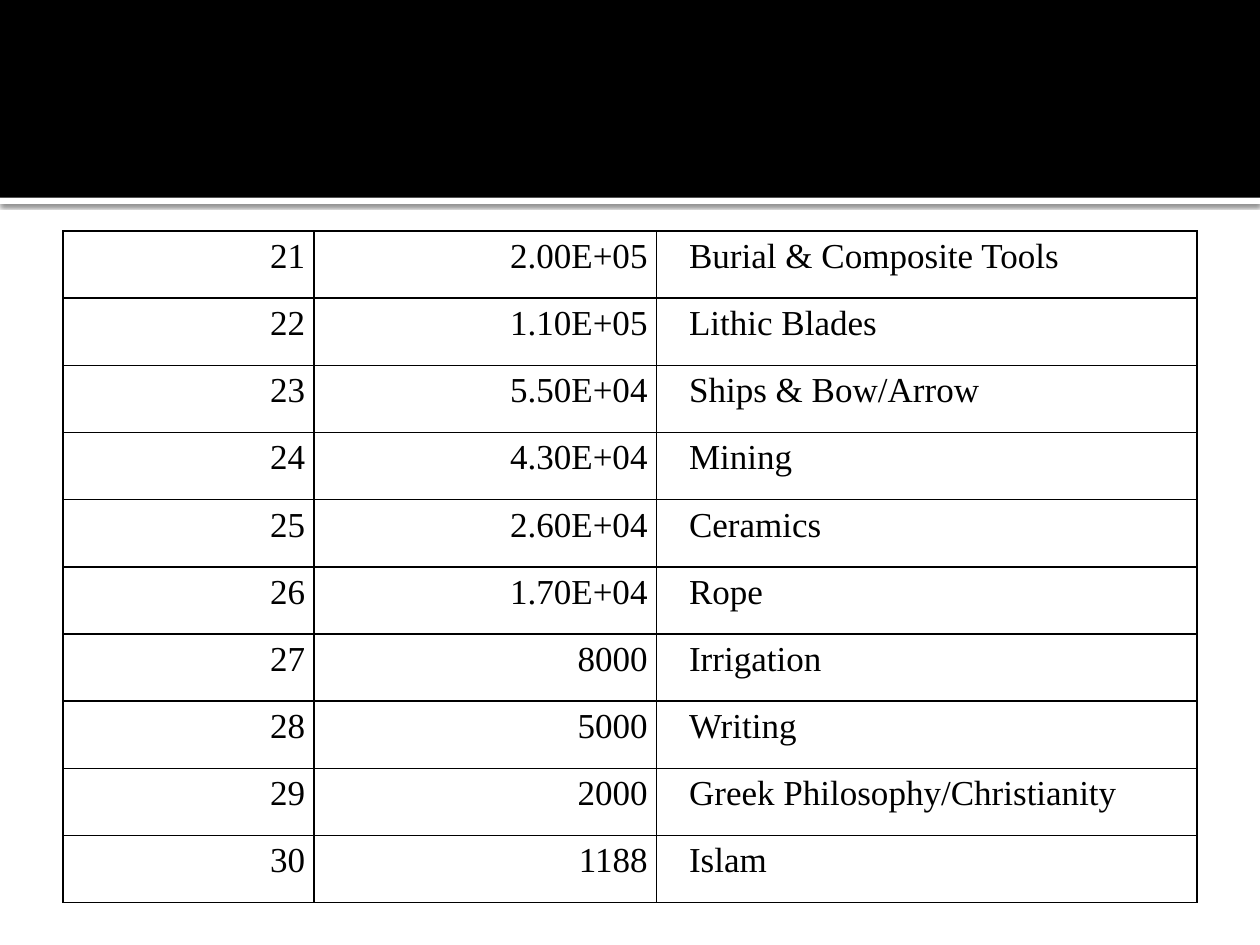
from lxml import etree
from pptx import Presentation
from pptx.dml.color import RGBColor
from pptx.enum import shapes, text
from pptx.oxml import ns
from pptx.util import Pt

BLACK, WHITE = "000000", "FFFFFF"
RIGHT, JUSTIFY = text.PP_ALIGN.RIGHT, text.PP_ALIGN.JUSTIFY
EVENTS = [
    ("21", "2.00E+05", "Burial & Composite Tools"),
    ("22", "1.10E+05", "Lithic Blades"),
    ("23", "5.50E+04", "Ships & Bow/Arrow"),
    ("24", "4.30E+04", "Mining"),
    ("25", "2.60E+04", "Ceramics"),
    ("26", "1.70E+04", "Rope"),
    ("27", "8000", "Irrigation"),
    ("28", "5000", "Writing"),
    ("29", "2000", "Greek Philosophy/Christianity"),
    ("30", "1188", "Islam"),
]


def color(value):
    """Turn a hex string into a colour."""
    return RGBColor.from_string(value)


def add_xml(parent, tag, **attrs):
    """Append a DrawingML element with the given attributes."""
    attrs = {key: str(value) for key, value in attrs.items()}
    return etree.SubElement(parent, ns.qn(f"a:{tag}"), attrs)


def write(tf, content, *, size, font, fill, align, spacing, indent):
    """Put one formatted paragraph into a text frame."""
    p = tf.paragraphs[0]
    p.alignment = align
    p.line_spacing = Pt(spacing)
    p._p.get_or_add_pPr().set("indent", str(Pt(indent)))
    r = p.add_run()
    r.text = content
    r.font.size = Pt(size)
    r.font.name = font
    r.font.color.rgb = color(fill)


def add_band(s, left, top, width, height, fill):
    """Add a plain filled rectangle."""
    sp = s.shapes.add_shape(shapes.MSO_SHAPE.RECTANGLE,
                            Pt(left), Pt(top), Pt(width), Pt(height))
    sp.shadow.inherit = False
    sp.fill.solid()
    sp.fill.fore_color.rgb = color(fill)
    sp.line.fill.background()
    return sp


def add_shadow(sp, blur, distance, angle, opacity):
    """Give a shape a black outer shadow."""
    effects = sp._element.spPr.find(ns.qn("a:effectLst"))
    shadow = add_xml(effects, "outerShdw", blurRad=Pt(blur), dist=Pt(distance),
                     dir=angle * 60000, algn="tl", rotWithShape=0)
    add_xml(add_xml(shadow, "srgbClr", val=BLACK), "alpha", val=opacity * 1000)


def add_header(s, left, top, width, height, rule=3.6):
    """Add the black header with a shadowed white rule along its foot."""
    foot = add_band(s, left, top + height - rule, width, rule, WHITE)
    add_shadow(foot, 2.5, 0.8, 90, 60)
    add_band(s, left, top, width, height - rule, BLACK)


def add_borders(cell, width):
    """Draw a black line on each side of a cell."""
    tc_pr = cell._tc.get_or_add_tcPr()
    for side in ("lnL", "lnR", "lnT", "lnB"):
        line = add_xml(tc_pr, side, w=Pt(width))
        add_xml(add_xml(line, "solidFill"), "srgbClr", val=BLACK)


def add_event_table(s, left, top, width, height):
    """Add the table of numbered events."""
    columns = ((143.3, RIGHT), (195.8, RIGHT), (width - 339.1, JUSTIFY))
    table = s.shapes.add_table(len(EVENTS), len(columns), Pt(left), Pt(top),
                               Pt(width), Pt(height)).table
    table.first_row = table.horz_banding = False
    for column, (column_width, _) in zip(table.columns, columns):
        column.width = Pt(column_width)
    for i, event in enumerate(EVENTS):
        table.rows[i].height = Pt(height / len(EVENTS))
        for j, content in enumerate(event):
            cell = table.cell(i, j)
            cell.margin_left = cell.margin_right = Pt(5)
            cell.margin_top = cell.margin_bottom = Pt(0)
            cell.vertical_anchor = text.MSO_ANCHOR.MIDDLE
            add_borders(cell, 1)
            cell.fill.background()
            write(cell.text_frame, content, size=20, font="Times New Roman",
                  fill=BLACK, align=columns[j][1], spacing=13, indent=13.7)


def main():
    """Build and save the slide."""
    prs = Presentation()
    prs.slide_width, prs.slide_height = Pt(720), Pt(540)
    s = prs.slides.add_slide(prs.slide_layouts[6])
    add_header(s, 0, 0, 720, 116.6)
    add_event_table(s, 36, 132, 648, 384)
    prs.save("out.pptx")


if __name__ == "__main__":
    main()
